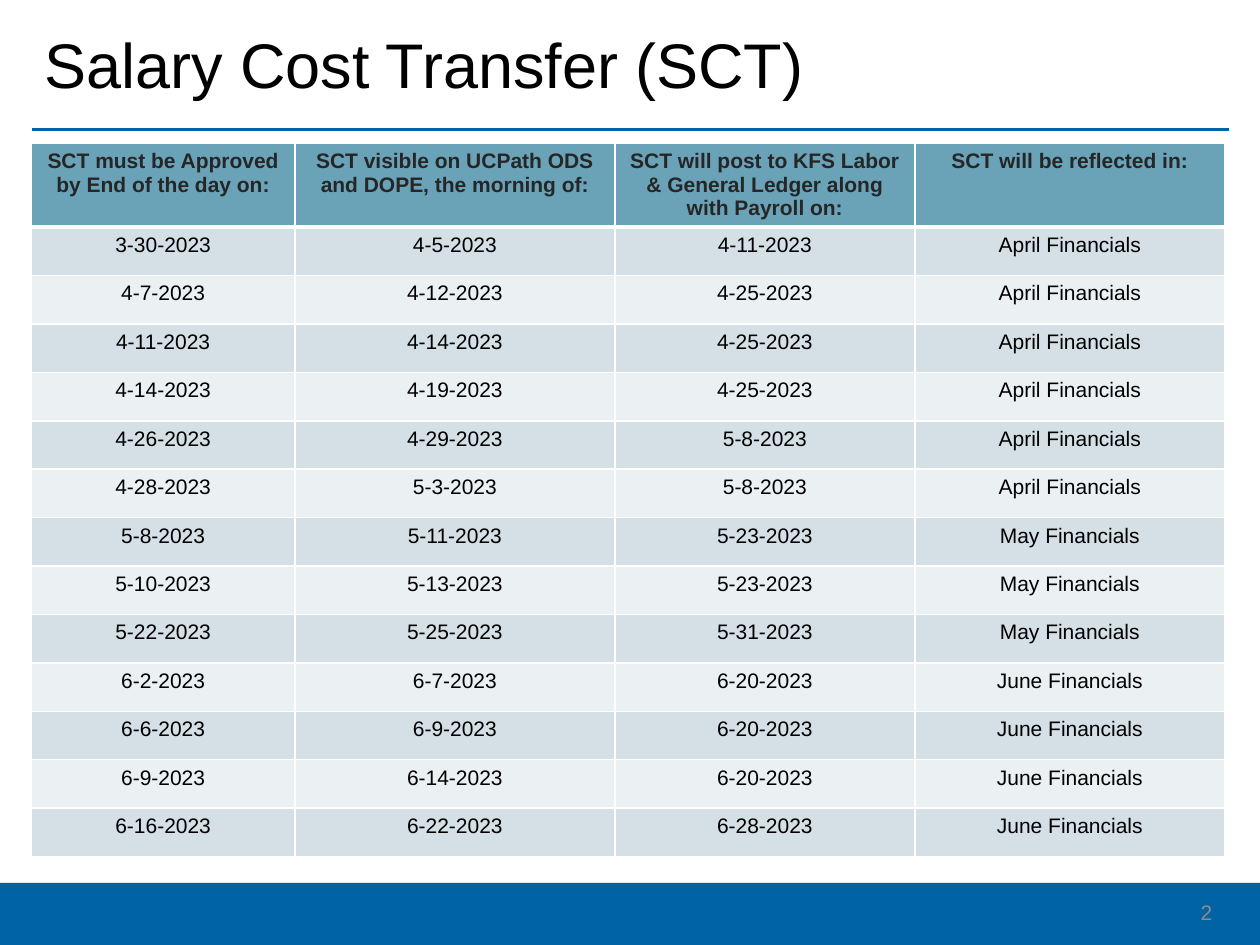
import pptx
import pptx.util
import pptx.dml.color
import pptx.enum.shapes
import pptx.enum.text
import pptx.oxml
import pptx.oxml.ns

Pt = pptx.util.Pt
RGB = pptx.dml.color.RGBColor.from_string
ALIGN = pptx.enum.text.PP_ALIGN
MIDDLE = pptx.enum.text.MSO_ANCHOR.MIDDLE

THEME = {
    "font": "Arial", "title_size": 36, "body_size": 12,
    "blue": "0064A4", "white": "FFFFFF", "black": "000000",
    "header_fill": "6AA2B8", "header_text": "262626",
    "bands": ["D4E0E6", "EBF0F3"], "page_number": "8C8C8C",
}


def write(tf, text, size=THEME["body_size"], color=THEME["black"],
          bold=False, align=ALIGN.CENTER, spacing=1.0):
    tf.word_wrap = True
    p = tf.paragraphs[0]
    p.alignment = align
    p.line_spacing = spacing
    r = p.add_run()
    r.text = text
    r.font.name = THEME["font"]
    r.font.size = Pt(size)
    r.font.bold = bold
    r.font.color.rgb = RGB(color)


def set_borders(cell, **widths):
    tc_pr = cell._tc.get_or_add_tcPr()
    for side in "LRTB":
        tc_pr.append(pptx.oxml.parse_xml(
            f'<a:ln{side} {pptx.oxml.ns.nsdecls("a")} w="{Pt(widths.get(side, 1))}">'
            f'<a:solidFill><a:srgbClr val="{THEME["white"]}"/></a:solidFill></a:ln{side}>'))


prs = pptx.Presentation()
prs.slide_width, prs.slide_height = Pt(720), Pt(540)
s = prs.slides.add_slide(prs.slide_layouts.get_by_name("Title Only"))

# Rule under the title
rule = s.shapes.add_connector(pptx.enum.shapes.MSO_CONNECTOR.STRAIGHT,
                              Pt(18), Pt(74), Pt(702), Pt(74))
rule.line.color.rgb = RGB(THEME["blue"])
rule.line.width = Pt(2.25)
rule._element.spPr.append(pptx.oxml.parse_xml(
    f'<a:effectLst {pptx.oxml.ns.nsdecls("a")}/>'))

# Footer band
band = s.shapes.add_shape(pptx.enum.shapes.MSO_SHAPE.RECTANGLE,
                          Pt(0), Pt(504.5), Pt(720), Pt(35.5))
band.shadow.inherit = False
band.fill.solid()
band.fill.fore_color.rgb = RGB(THEME["blue"])
band.line.fill.background()

# Title
title = s.shapes.title
title.left, title.top, title.width, title.height = Pt(18), Pt(3.6), Pt(684), Pt(70.4)
title.text_frame.auto_size = pptx.enum.text.MSO_AUTO_SIZE.NONE
title.text_frame.vertical_anchor = MIDDLE
write(title.text_frame, "Salary Cost Transfer (SCT)", size=THEME["title_size"],
      align=ALIGN.LEFT, spacing=0.9)

# Transfer schedule: header, then dates and the month they are reported in
headers = ["SCT must be Approved by End of the day on:",
           "SCT visible on UCPath ODS and DOPE, the morning of:",
           "SCT will post to KFS Labor & General Ledger along with Payroll on:",
           "SCT will be reflected in:"]
schedule = [
    ("3-30", "4-5", "4-11", "April"),
    ("4-7", "4-12", "4-25", "April"),
    ("4-11", "4-14", "4-25", "April"),
    ("4-14", "4-19", "4-25", "April"),
    ("4-26", "4-29", "5-8", "April"),
    ("4-28", "5-3", "5-8", "April"),
    ("5-8", "5-11", "5-23", "May"),
    ("5-10", "5-13", "5-23", "May"),
    ("5-22", "5-25", "5-31", "May"),
    ("6-2", "6-7", "6-20", "June"),
    ("6-6", "6-9", "6-20", "June"),
    ("6-9", "6-14", "6-20", "June"),
    ("6-16", "6-22", "6-28", "June"),
]
rows = [headers] + [[f"{day}-2023" for day in days] + [f"{month} Financials"]
                    for *days, month in schedule]

table = s.shapes.add_table(len(rows), len(headers),
                           Pt(18), Pt(81.8), Pt(682), Pt(408)).table
for column, width in zip(table.columns, [150.5, 182.9, 171.4, 177.2]):
    column.width = Pt(width)

for i, row in enumerate(rows):
    is_header = i == 0
    table.rows[i].height = Pt(48 if is_header else 27.69)
    fill = THEME["header_fill"] if is_header else THEME["bands"][(i - 1) % 2]
    color = THEME["header_text"] if is_header else THEME["black"]
    for j, text in enumerate(row):
        cell = table.cell(i, j)
        set_borders(cell, T=3 if i == 1 else 1, B=3 if is_header else 1)
        cell.fill.solid()
        cell.fill.fore_color.rgb = RGB(fill)
        write(cell.text_frame, text, color=color, bold=is_header)

# Page number
number = s.shapes.add_textbox(Pt(537.8), Pt(507), Pt(162), Pt(28.8))
number.text_frame.vertical_anchor = MIDDLE
write(number.text_frame, "2", color=THEME["page_number"], align=ALIGN.RIGHT)

prs.save("out.pptx")
